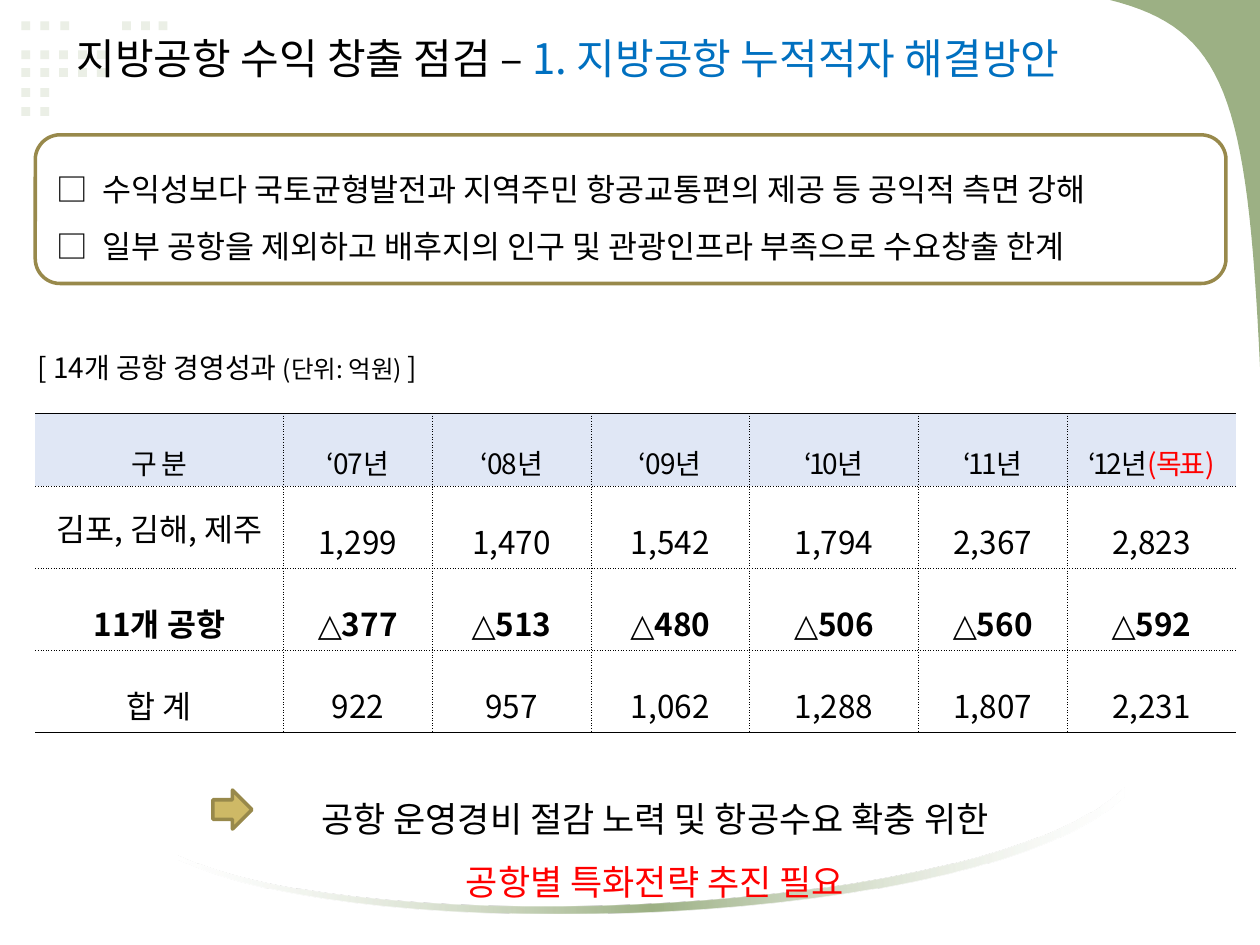
from lxml import etree
from pptx import Presentation
from pptx import util as u
from pptx.dml.color import RGBColor
from pptx.enum import shapes, text
from pptx.oxml import parse_xml
from pptx.oxml.ns import nsdecls, qn

COLORS = {
    "black": "000000", "blue": "0070C0", "red": "FF0000", "white": "FFFFFF",
    "dot": "EBEFE6", "green": "9CB084", "header": "E0E7F5",
    "olive": "98894B", "gold": "CEB966",
}
KOREAN, LATIN = "Noto Sans CJK KR", "Calibri"
COLUMNS, ROWS = 100, 75
CELL = u.Inches(0.1)

DOT_SIZE = 0.7
DOT_ROWS = {
    1.7: (1.7, 3.2, 4.8, 9.7, 11.2, 12.6),
    4.0: (1.7, 3.2, 4.7, 6.2, 7.7),
    5.4: (1.7, 3.2, 4.7, 6.2, 7.7),
    7.0: (1.7, 3.2),
    8.5: (1.7, 3.2),
}
CORNER_CURVE = ((100, 29.1), (99, 7.6), (97.2, 2.3), (88.1, 0))
BAND_LOWER = ((89.2, 63.2), (78.5, 73.7), (28.6, 75.3), (14.2, 68.2))
BAND_UPPER = ((14.2, 67.9), (28.9, 74.8), (79, 72.7), (89.2, 62.5))

TABLE_COLUMNS = (19.7, 11.8, 12.6, 12.6, 13.4, 11.8, 13.4)
TABLE_ROWS = (5.8, 6.5, 6.5, 6.5)
YEARS = ("‘07년", "‘08년", "‘09년", "‘10년", "‘11년", "‘12년")
MAJOR = ("1,299", "1,470", "1,542", "1,794", "2,367", "2,823")
LOSSES = ("377", "513", "480", "506", "560", "592")
TOTALS = ("922", "957", "1,062", "1,288", "1,807", "2,231")


def grid(*cells):
    """Turn counts of grid cells into lengths."""
    return [u.Emu(round(count * CELL)) for count in cells]


def rgb(name):
    """Look up a colour by name."""
    return RGBColor.from_string(COLORS[name])


def write(para, spans, size, bold=None, spacing=None, tracking=None, align=None):
    """Fill a paragraph with (words, colour, font) spans."""
    font = para.font
    font.name, font.size, font.bold = KOREAN, u.Pt(size), bold
    font.color.rgb = rgb("black")
    etree.SubElement(font._element, qn("a:ea"), typeface=KOREAN)
    if tracking:
        font._element.set("spc", str(round(tracking * 100)))
    para.line_spacing, para.alignment = spacing, align
    for words, color, name, points in spans:
        span = para.add_run()
        span.text = words
        if color:
            span.font.color.rgb = rgb(color)
        if name:
            span.font.name = name
        if points:
            span.font.size = u.Pt(points)


def plain(words, color=None, name=None, points=None):
    """Describe one span of text."""
    return words, color, name, points


def add_text(page, place, lines, size, wrap=True, **style):
    """Add a text box with one paragraph per line of spans."""
    box = page.shapes.add_textbox(*grid(*place))
    frame = box.text_frame
    frame.word_wrap = wrap
    frame.auto_size = text.MSO_AUTO_SIZE.SHAPE_TO_FIT_TEXT
    for index, spans in enumerate(lines):
        para = frame.add_paragraph() if index else frame.paragraphs[0]
        write(para, spans, size, **style)


def add_preset(page, kind, place, fill=None, line=None):
    """Add a preset shape with optional fill and outline."""
    shape = page.shapes.add_shape(kind, *grid(*place))
    paint(shape, fill, line)


def paint(shape, fill=None, line=None):
    """Set the fill and outline of a shape."""
    shape.shadow.inherit = False
    if fill:
        shape.fill.solid()
        shape.fill.fore_color.rgb = rgb(fill)
    else:
        shape.fill.background()
    if line:
        shape.line.color.rgb = rgb(line)
        shape.line.width = u.Pt(2)
    else:
        shape.line.fill.background()


def bezier(curve, steps=32):
    """Sample a cubic curve given by four control points."""
    weights = (1, 3, 3, 1)
    return [
        tuple(sum(w * (1 - t) ** (3 - k) * t ** k * curve[k][axis]
                  for k, w in enumerate(weights)) for axis in (0, 1))
        for t in (step / steps for step in range(steps + 1))
    ]


def add_outline(page, points, fill):
    """Add a closed freeform through grid points."""
    start, *rest = [grid(*point) for point in points]
    builder = page.shapes.build_freeform(*start, scale=1.0)
    builder.add_line_segments(rest, close=True)
    shape = builder.convert_to_shape()
    paint(shape, fill)
    return shape


def fade_ends(shape):
    """Fade a shape from its middle to both ends."""
    shape.fill.gradient()
    shape.fill.gradient_angle = 0
    stops = shape.fill._xPr.find(qn("a:gradFill")).find(qn("a:gsLst"))
    for stop in list(stops):
        stops.remove(stop)
    for position, name, alpha in ((0, "white", 30), (50, "green", 100), (100, "white", 30)):
        stops.append(parse_xml(
            f'<a:gs {nsdecls("a")} pos="{position * 1000}"><a:srgbClr val="{COLORS[name]}">'
            f'<a:alpha val="{alpha * 1000}"/></a:srgbClr></a:gs>'))


def set_borders(cell, styles):
    """Give a cell its left, right, top and bottom borders."""
    for index, (side, style) in enumerate(zip("LRTB", styles)):
        if style:
            inside = (f'<a:solidFill><a:srgbClr val="{COLORS["black"]}"/></a:solidFill>'
                      f'<a:prstDash val="{style}"/>')
        else:
            inside = "<a:noFill/>"
        cell._tc.get_or_add_tcPr().insert(index, parse_xml(
            f'<a:ln{side} {nsdecls("a")} w="{u.Pt(0.28)}">{inside}</a:ln{side}>'))


def result_rows():
    """List the spans of every table cell, row by row."""
    header = [[plain("구 분")]] + [[plain(year)] for year in YEARS]
    header[-1].append(plain("(목표)", "red"))
    major = [plain("김포", name=LATIN), plain(", "), plain("김해", name=LATIN),
             plain(", "), plain("제주", name=LATIN)]
    minor = [plain("11"), plain("개 공항", name=LATIN)]
    return [
        header,
        [major] + [[plain(value)] for value in MAJOR],
        [minor] + [[plain("△", name=LATIN), plain(value)] for value in LOSSES],
        [[plain("합 계", name=LATIN)]] + [[plain(value)] for value in TOTALS],
    ]


def add_results(page, left, top):
    """Add the table of yearly results."""
    place = grid(left, top, sum(TABLE_COLUMNS), sum(TABLE_ROWS))
    table = page.shapes.add_table(len(TABLE_ROWS), len(TABLE_COLUMNS), *place).table
    for column, width in zip(table.columns, grid(*TABLE_COLUMNS)):
        column.width = width
    for row, height in zip(table.rows, grid(*TABLE_ROWS)):
        row.height = height
    last_row, last_column = len(TABLE_ROWS) - 1, len(TABLE_COLUMNS) - 1
    for r, cells in enumerate(result_rows()):
        for c, spans in enumerate(cells):
            cell = table.cell(r, c)
            cell.vertical_anchor = text.MSO_ANCHOR.MIDDLE
            cell.margin_left = cell.margin_right = u.Inches(0.02)
            cell.margin_top = cell.margin_bottom = u.Inches(0.02)
            if r == 0:
                cell.fill.solid()
                cell.fill.fore_color.rgb = rgb("header")
            else:
                cell.fill.background()
            set_borders(cell, (
                "sysDot" if c > 0 else None, "sysDot" if c < last_column else None,
                "sysDot" if r > 0 else "solid", "sysDot" if r < last_row else "solid"))
            tracking = (-0.5 if c < 4 else -1.5) if r == 0 else None
            write(cell.text_frame.paragraphs[0], spans, 18 if r else 16, bold=r == 2,
                  spacing=1 if (r, c) == (1, 0) else 1.6, tracking=tracking,
                  align=text.PP_ALIGN.CENTER)


def add_backdrop(page):
    """Add the dots, the corner and the curved band."""
    for top, lefts in DOT_ROWS.items():
        for left in lefts:
            add_preset(page, shapes.MSO_SHAPE.RECTANGLE, (left, top, DOT_SIZE, DOT_SIZE), "dot")
    add_outline(page, [(COLUMNS, 0)] + bezier(CORNER_CURVE), "green")
    fade_ends(add_outline(page, bezier(BAND_LOWER) + bezier(BAND_UPPER), "green"))


def main():
    """Build the slide and save it."""
    deck = Presentation()
    deck.slide_width, deck.slide_height = grid(COLUMNS, ROWS)
    page = deck.slides.add_slide(deck.slide_layouts[6])
    add_backdrop(page)
    add_text(page, (5.1, 2.1, 89.4, 5), [[
        plain("지방공항 수익 창출 점검 – "), plain("1. 지방공항 누적적자 해결방안", "blue")]], 24, wrap=False)
    add_text(page, (3.5, 11.5, 94.5, 10.1), [
        [plain("□  수익성보다 국토균형발전과 지역주민 항공교통편의 제공 등 공익적 측면 강해")],
        [plain("□  일부 공항을 제외하고 배후지의 인구 및 관광인프라 부족으로 수요창출 한계")],
    ], 18, spacing=1.5)
    add_preset(page, shapes.MSO_SHAPE.ROUNDED_RECTANGLE, (2.8, 10.7, 94.5, 11.8), line="olive")
    add_text(page, (7.5, 61.1, 89, 11.1), [
        [plain("공항 운영경비 절감 노력 및 항공수요 확충 위한")],
        [plain("공항별 특화전략 추진 필요", "red")],
    ], 20, spacing=1.5, align=text.PP_ALIGN.CENTER)
    add_results(page, 2.8, 32.8)
    add_text(page, (2, 27.3, 37.3, 3.7), [[
        plain("[ 14개 공항 경영성과 "), plain("(단위: 억원) ", points=14), plain("]")]], 16, wrap=False)
    add_preset(page, shapes.MSO_SHAPE.RIGHT_ARROW, (16.9, 62.7, 3.1, 3.1), "gold", "olive")
    deck.save("out.pptx")


if __name__ == "__main__":
    main()
